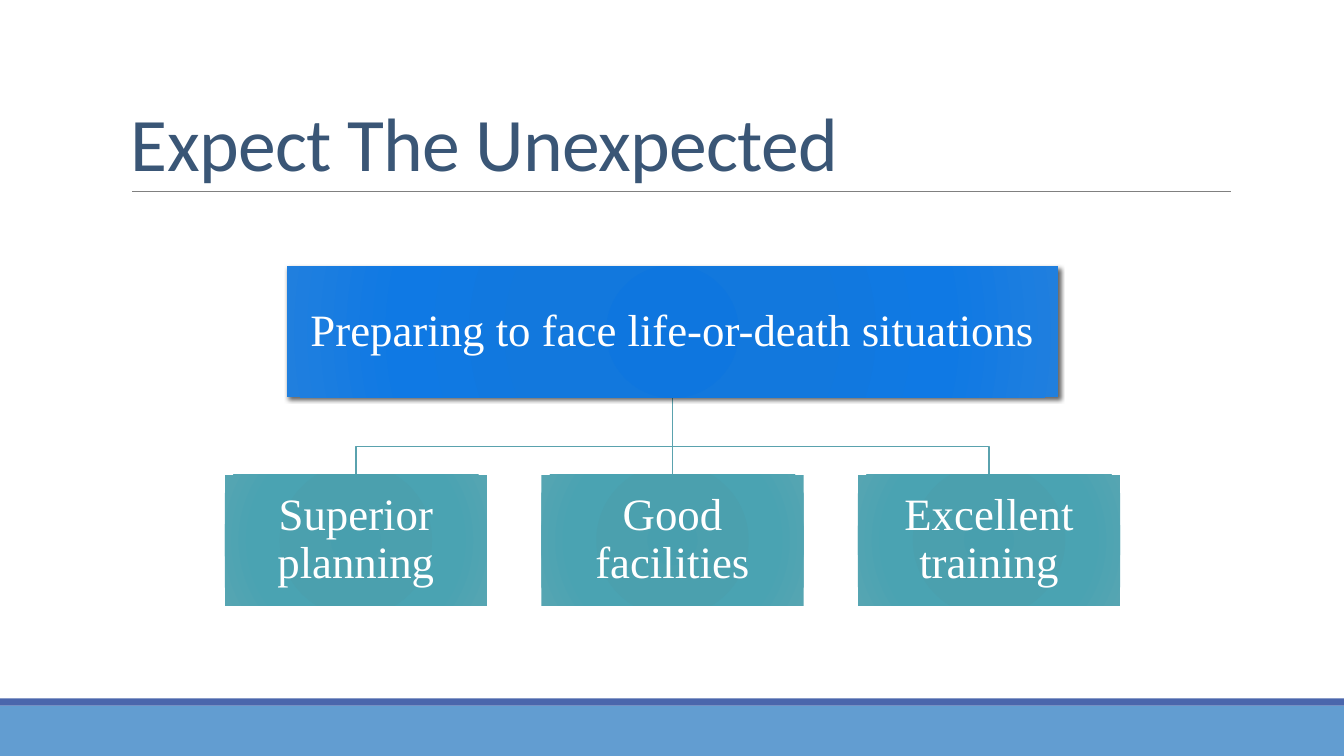
"""Build a slide with a title and a one-level tree of boxes."""
from dataclasses import dataclass

import pptx
import pptx.dml.color
import pptx.enum.shapes
import pptx.enum.text
import pptx.oxml
import pptx.oxml.ns
import pptx.util
from pptx.util import Inches

Shade = tuple[tuple[int, str], ...]


@dataclass(frozen=True)
class Theme:
    title: str = "3A5676"
    text: str = "FFFFFF"
    rule: str = "808080"
    link: str = "5AA2AE"
    band: str = "629DD1"
    edge: str = "4A66AC"
    root: Shade = ((0, "0E76DF"), (34, "1278DD"), (70, "0F79E4"), (100, "207FDE"))
    leaf: Shade = ((0, "489FAE"), (34, "4BA0AE"), (70, "4AA3B2"), (100, "56A5B2"))
    head: str = "Calibri"
    body: str = "Times New Roman"
    large: float = 54
    small: float = 32
    thin: float = 0.5
    thick: float = 1.25


@dataclass(frozen=True)
class Box:
    text: str
    mid: float
    top: float
    width: float
    shade: Shade
    raised: bool = False


THEME = Theme()
HIGH = 1.3
MID = 6.67
STEP = 3.14
TOP, BEND, BASE = 3.94, 4.43, 4.71
ROOT = Box("Preparing to face life-or-death situations", MID, TOP - HIGH, 7.65, THEME.root, True)
LEAVES = [
    Box(text, MID + (spot - 1) * STEP, BASE, 2.6, THEME.leaf)
    for spot, text in enumerate(("Superior planning", "Good facilities", "Excellent training"))
]


def color(code: str) -> pptx.dml.color.RGBColor:
    return pptx.dml.color.RGBColor.from_string(code)


def apply(item, values: dict) -> None:
    for name, value in values.items():
        setattr(item, name, value)


def make(xml: str):
    return pptx.oxml.parse_xml(xml.replace(">", f" {pptx.oxml.ns.nsdecls('a')}>", 1))


def stroke(item, code: str, width: float) -> None:
    item.line.color.rgb = color(code)
    item.line.width = pptx.util.Pt(width)


def write(shape, text: str, code: str, font: str, size: float, frame: dict, para: dict):
    apply(shape.text_frame, {"word_wrap": True, **frame})
    line = shape.text_frame.paragraphs[0]
    apply(line, para)
    run = line.add_run()
    run.text = text
    apply(run.font, {"name": font, "size": pptx.util.Pt(size)})
    run.font.color.rgb = color(code)
    return run


def block(slide, left: float, top: float, width: float, high: float):
    kind = pptx.enum.shapes.MSO_SHAPE.RECTANGLE
    shape = slide.shapes.add_shape(kind, *map(Inches, (left, top, width, high)))
    shape.shadow.inherit = False
    shape.line.fill.background()
    return shape


def band(slide, top: float, high: float, code: str) -> None:
    shape = block(slide, 0, top, 13.33, high)
    shape.fill.solid()
    shape.fill.fore_color.rgb = color(code)


def line(slide, start: tuple, end: tuple, code: str, width: float) -> None:
    kind = pptx.enum.shapes.MSO_CONNECTOR.STRAIGHT
    item = slide.shapes.add_connector(kind, *map(Inches, start + end))
    stroke(item, code, width)
    item._element.spPr.append(make("<a:effectLst></a:effectLst>"))


def link(slide, leaf: Box) -> None:
    if leaf.mid == MID:
        line(slide, (MID, TOP), (MID, BASE), THEME.link, THEME.thick)
        return
    points = [(MID, BEND), (leaf.mid, BEND), (leaf.mid, BASE)]
    form = slide.shapes.build_freeform(Inches(MID), Inches(TOP))
    form.add_line_segments([(Inches(x), Inches(y)) for x, y in points], close=False)
    item = form.convert_to_shape()
    item.shadow.inherit = False
    item.fill.background()
    stroke(item, THEME.link, THEME.thick)


def draw(slide, box: Box) -> None:
    shape = block(slide, box.mid - box.width / 2, box.top, box.width, HIGH)
    shape.fill.background()
    stops = "".join(
        f'<a:gs pos="{spot * 1000}"><a:srgbClr val="{code}"/></a:gs>' for spot, code in box.shade
    )
    grad = make(
        f'<a:gradFill rotWithShape="1"><a:gsLst>{stops}</a:gsLst><a:path path="circle">'
        '<a:fillToRect l="100000" t="100000" r="100000" b="100000"/></a:path></a:gradFill>'
    )
    props = shape._element.spPr
    props.replace(props.find(pptx.oxml.ns.qn("a:noFill")), grad)
    if box.raised:
        props.find(pptx.oxml.ns.qn("a:effectLst")).append(make(
            '<a:outerShdw blurRad="38100" dist="25400" dir="2700000" rotWithShape="0">'
            '<a:srgbClr val="000000"><a:alpha val="60000"/></a:srgbClr></a:outerShdw>'
        ))
    frame = {f"margin_{side}": Inches(0.02) for side in ("left", "top", "right", "bottom")}
    frame["vertical_anchor"] = pptx.enum.text.MSO_ANCHOR.MIDDLE
    para = {"alignment": pptx.enum.text.PP_ALIGN.CENTER, "line_spacing": 0.9}
    write(shape, box.text, THEME.text, THEME.body, THEME.small, frame, para)


def title(slide, text: str) -> None:
    shape = slide.shapes.add_textbox(*map(Inches, (1.2, 0.31, 11, 1.59)))
    frame = {"vertical_anchor": pptx.enum.text.MSO_ANCHOR.BOTTOM}
    para = {"line_spacing": 0.85}
    run = write(shape, text, THEME.title, THEME.head, THEME.large, frame, para)
    run._r.get_or_add_rPr().set("spc", "-50")


def main() -> None:
    deck = pptx.Presentation()
    apply(deck, {"slide_width": Inches(13.33), "slide_height": Inches(7.5)})
    slide = deck.slides.add_slide(deck.slide_layouts[6])
    band(slide, 7, 0.5, THEME.band)
    band(slide, 6.93, 0.07, THEME.edge)
    line(slide, (1.31, 1.9), (12.21, 1.9), THEME.rule, THEME.thin)
    for leaf in LEAVES:
        link(slide, leaf)
    for box in (ROOT, *LEAVES):
        draw(slide, box)
    title(slide, "Expect The Unexpected")
    deck.save("out.pptx")


if __name__ == "__main__":
    main()
